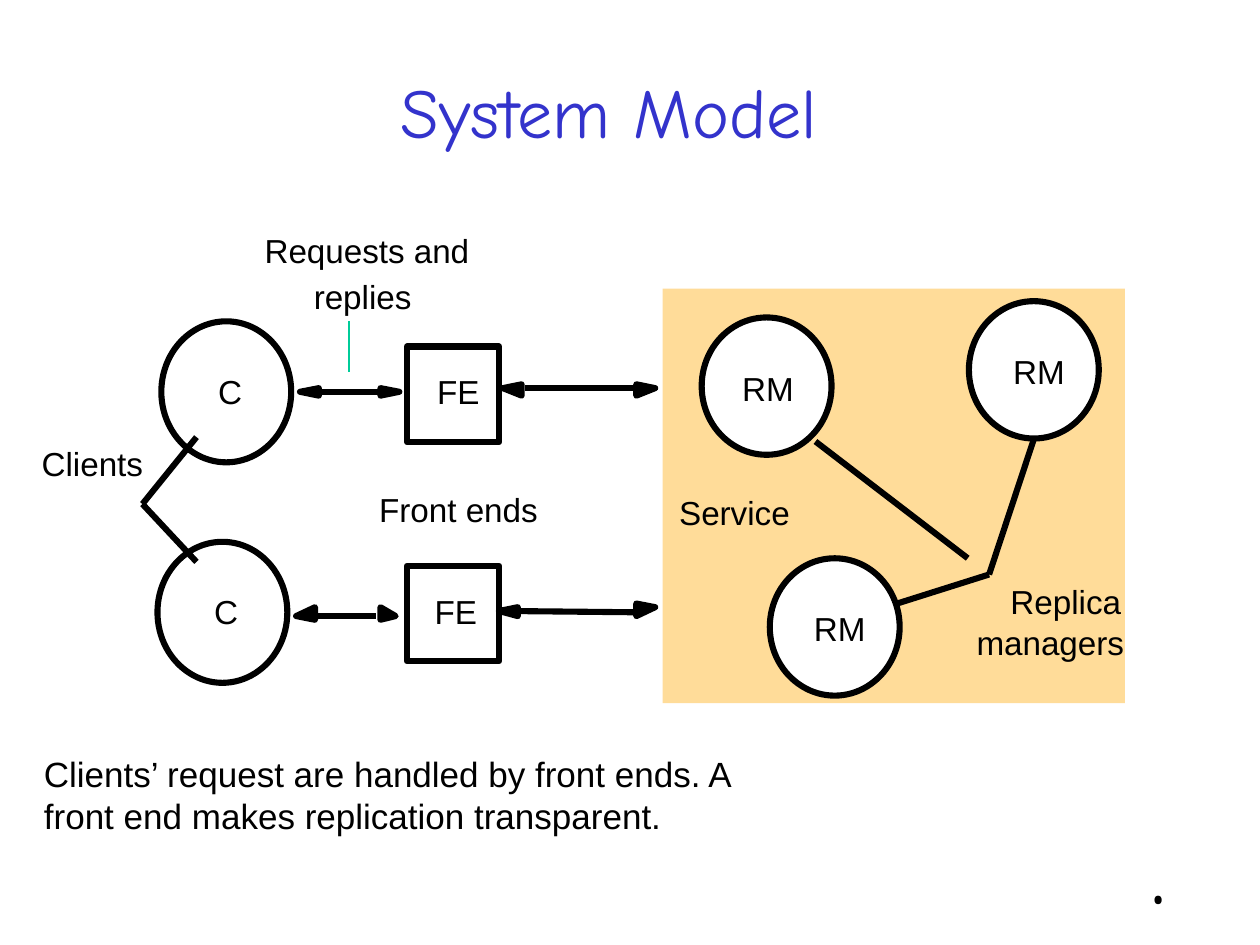
from pptx import Presentation
from pptx.dml.color import RGBColor
from pptx.enum.shapes import MSO_CONNECTOR, MSO_SHAPE
from pptx.enum.text import MSO_ANCHOR, MSO_AUTO_SIZE, PP_ALIGN
from pptx.oxml import parse_xml
from pptx.util import Pt


def paint(target, color):
    if color is None:
        target.background()
    else:
        target.solid()
        target.fore_color.rgb = RGBColor.from_string(color)


def write(frame, wording, color, font, layout, align=PP_ALIGN.LEFT):
    for key, value in layout.items():
        setattr(frame, key, value)
    paragraph = frame.paragraphs[0]
    paragraph.alignment = align
    run = paragraph.add_run()
    run.text = wording
    for key, value in font.items():
        setattr(run.font, key, value)
    paint(run.font.fill, color)


BLACK, WHITE, SAND, GREEN, BLUE = "000000", "FFFFFF", "FFDC99", "00CC99", "3333CC"
STROKE = 3.5
EFFECTS = '<a:effectLst xmlns:a="http://schemas.openxmlformats.org/drawingml/2006/main"/>'

deck = Presentation()
deck.slide_width, deck.slide_height = Pt(720), Pt(540)
slide = deck.slides.add_slide(deck.slide_layouts[6])
shapes = slide.shapes

title = shapes.add_textbox(Pt(41.8), Pt(18), Pt(612), Pt(90))
write(title.text_frame, "System Model", BLUE,
      {"name": "Comic Neue", "size": Pt(40)},
      {"word_wrap": True, "vertical_anchor": MSO_ANCHOR.MIDDLE}, PP_ALIGN.CENTER)

nodes = [(MSO_SHAPE.RECTANGLE, 378.7, 164.9, 264.2, 236.9, SAND, None)]
for top in (198, 323.3):
    nodes.append((MSO_SHAPE.RECTANGLE, 232.6, top, 50.4, 51.8, WHITE, None))
    nodes.append((MSO_SHAPE.RECTANGLE, 232.6, top, 52.6, 54.7, None, BLACK))
for left, top in ((92.2, 183.6), (90, 309.6)):
    nodes.append((MSO_SHAPE.OVAL, left, top, 74.2, 80.6, None, BLACK))
for left, top in ((401, 181.4), (439.9, 319), (553.7, 172.1)):
    nodes.append((MSO_SHAPE.OVAL, left, top, 74.2, 78.5, WHITE, BLACK))

for kind, left, top, width, height, fill, outline in nodes:
    node = shapes.add_shape(kind, Pt(left), Pt(top), Pt(width), Pt(height))
    node.shadow.inherit = False
    paint(node.fill, fill)
    paint(node.line.fill, outline)
    if outline:
        node.line.width = Pt(STROKE)

links = [
    (199.4, 183.6, 199.4, 212.4, GREEN, 1.5),
    (565.2, 328.3, 591.1, 250, BLACK, STROKE),
    (553, 319, 466, 252.3, BLACK, STROKE),
    (565.2, 328.3, 512.6, 344.9, BLACK, STROKE),
    (81.4, 288, 112.3, 249.8, BLACK, STROKE),
    (112.3, 321.1, 81.4, 288, BLACK, STROKE),
    (300.2, 221.8, 363.6, 221.8, BLACK, STROKE),
    (295.9, 349.2, 363.6, 349.9, BLACK, STROKE),
    (184.3, 223.9, 217.4, 223.9, BLACK, STROKE),
    (180, 352.1, 214.6, 352.1, BLACK, STROKE),
]
for x1, y1, x2, y2, color, weight in links:
    link = shapes.add_connector(MSO_CONNECTOR.STRAIGHT, Pt(x1), Pt(y1), Pt(x2), Pt(y2))
    paint(link.line.fill, color)
    link.line.width = Pt(weight)
    link._element.spPr.append(parse_xml(EFFECTS))

arrowheads = [
    (287.3, 221.8, 298.1, 219.6, 226.1),
    (374.4, 221.8, 363.6, 219.6, 226.1),
    (285.1, 349.2, 295.9, 347, 352.1),
    (374.4, 347, 363.6, 344.9, 352.1),
    (171.4, 223.9, 182.2, 221.8, 226.1),
    (228.2, 223.9, 217.4, 221.8, 226.1),
    (169.2, 352.1, 180, 347, 354.2),
    (226.1, 352.1, 217.4, 347, 354.2),
]
for tip_x, tip_y, base_x, base_top, base_bottom in arrowheads:
    outline = shapes.build_freeform(Pt(base_x), Pt(base_top))
    outline.add_line_segments([(Pt(tip_x), Pt(tip_y)), (Pt(base_x), Pt(base_bottom))])
    arrowhead = outline.convert_to_shape()
    arrowhead.shadow.inherit = False
    paint(arrowhead.fill, BLACK)
    paint(arrowhead.line.fill, BLACK)
    arrowhead.line.width = Pt(STROKE)

label_font = {"name": "Arial", "size": Pt(19)}
label_layout = {"word_wrap": False, "auto_size": MSO_AUTO_SIZE.SHAPE_TO_FIT_TEXT,
                "margin_left": 0, "margin_top": 0, "margin_right": 0, "margin_bottom": 0}
labels = [
    ("Requests and", 151.2, 131.8, 117.4),
    ("replies", 179.3, 157.7, 56.2),
    ("C", 124.6, 212.4, 13.7),
    ("C", 122.4, 337.7, 13.7),
    ("FE", 249.8, 212.4, 24.5),
    ("FE", 248.4, 337.7, 24.5),
    ("Clients", 23.8, 253.4, 58.3),
    ("Front ends", 216.7, 279.4, 91.4),
    ("Service", 388.1, 281.5, 63.4),
    ("Replica", 577.4, 331.9, 63.4),
    ("managers", 558, 355.7, 85),
    ("RM", 424.1, 210.2, 29.5),
    ("RM", 465.1, 347.8, 29.5),
    ("RM", 578.9, 200.9, 29.5),
]
for wording, left, top, width in labels:
    label = shapes.add_textbox(Pt(left), Pt(top), Pt(width), Pt(23))
    write(label.text_frame, wording, BLACK, label_font, label_layout)

bullet = shapes.add_textbox(Pt(649.4), Pt(493.9), Pt(20.9), Pt(36))
write(bullet.text_frame, "•", BLACK, {"name": "Cambria", "size": Pt(24)},
      {"word_wrap": False, "auto_size": MSO_AUTO_SIZE.SHAPE_TO_FIT_TEXT})

summary = shapes.add_shape(MSO_SHAPE.RECTANGLE, Pt(18), Pt(426.2), Pt(437.8), Pt(55.4))
summary.shadow.inherit = False
paint(summary.fill, WHITE)
paint(summary.line.fill, None)
write(summary.text_frame,
      "Clients’ request are handled by front ends. A front end makes replication transparent.",
      BLACK, {"name": "Arial", "size": Pt(20)},
      {"word_wrap": True, "auto_size": MSO_AUTO_SIZE.SHAPE_TO_FIT_TEXT,
       "vertical_anchor": MSO_ANCHOR.TOP})

deck.save("out.pptx")
